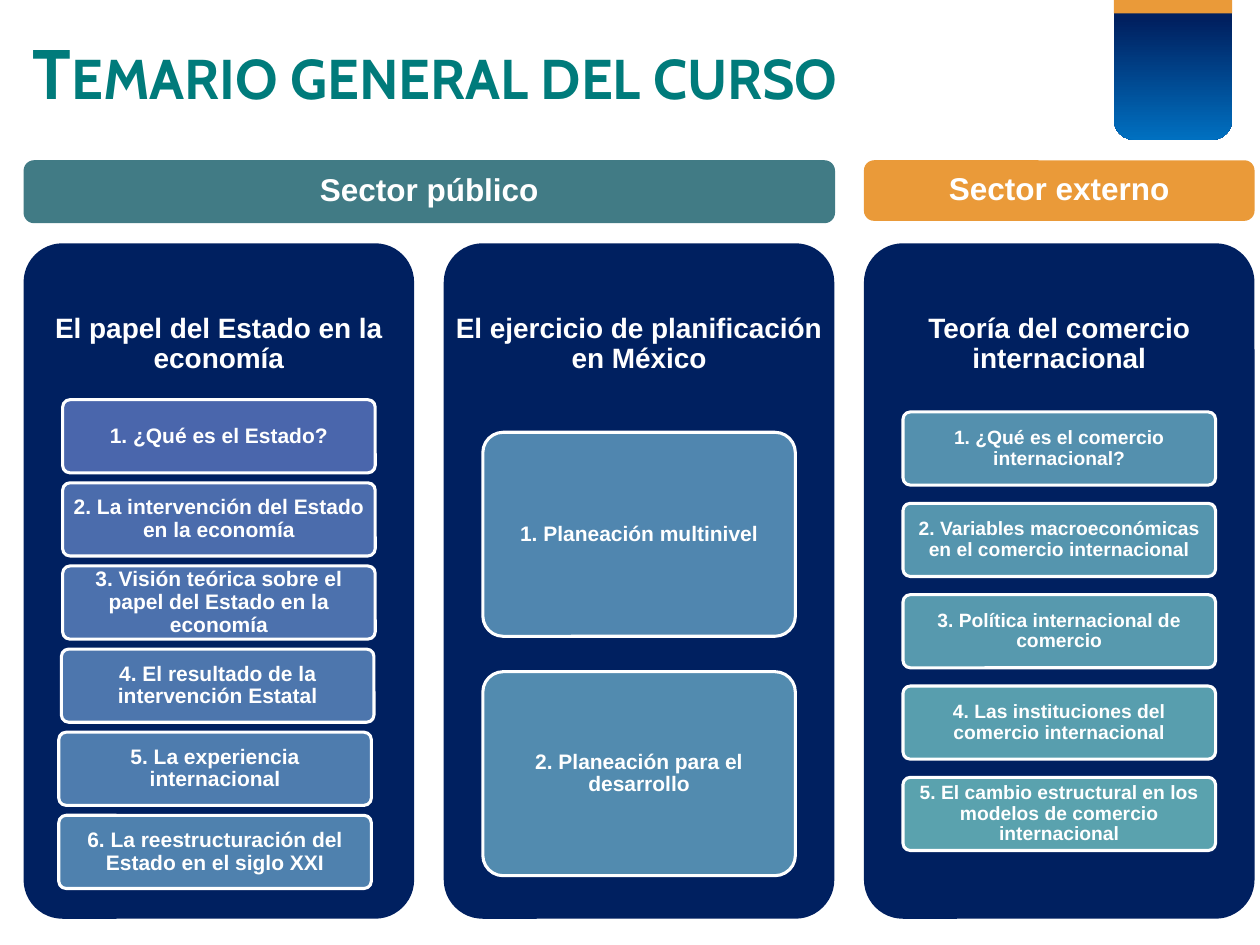
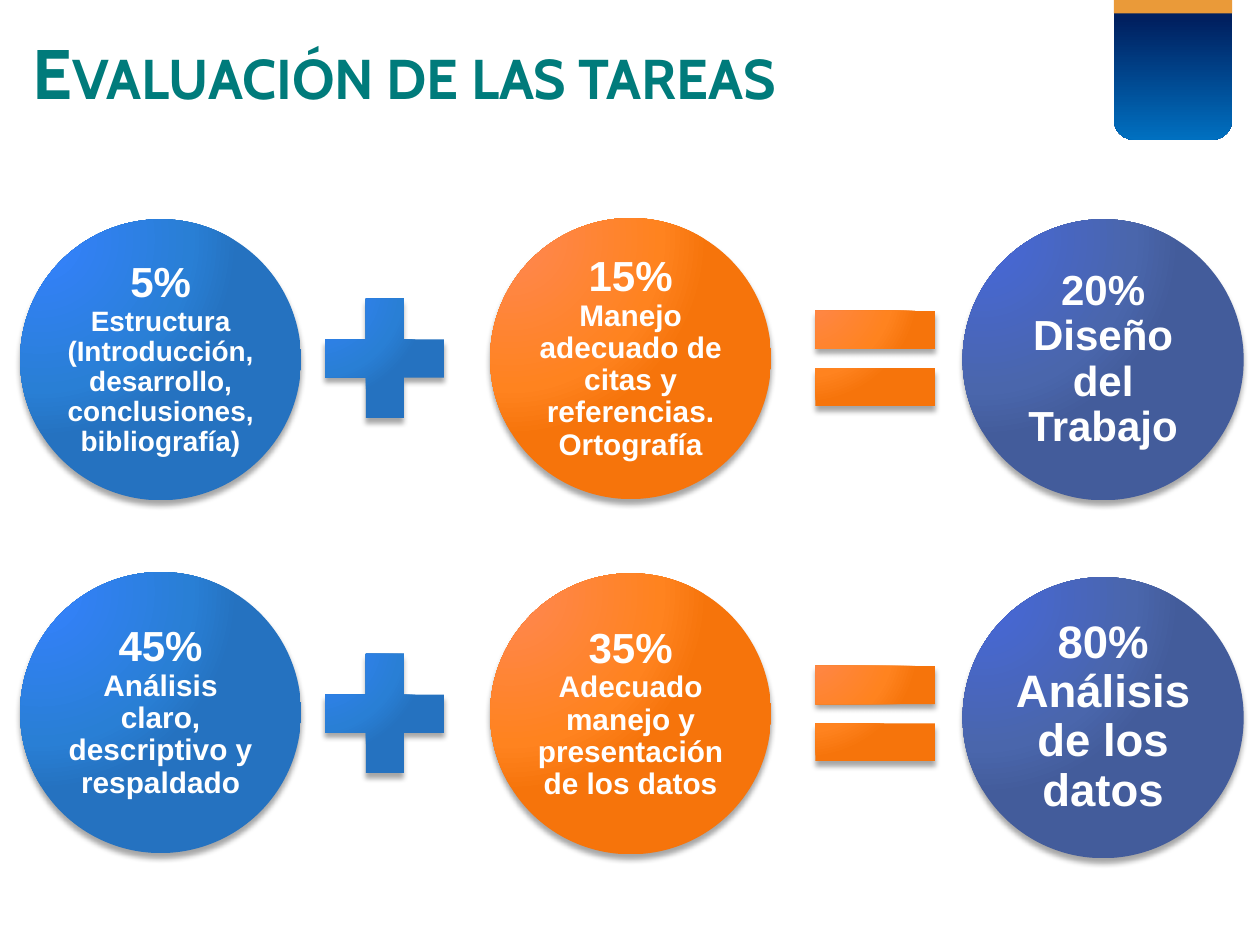
from dataclasses import dataclass

from pptx import Presentation
from pptx.dml.color import RGBColor
from pptx.enum.shapes import MSO_SHAPE as Shape
from pptx.enum.text import MSO_ANCHOR as Anchor, MSO_AUTO_SIZE as AutoSize, PP_ALIGN as Align
from pptx.oxml import parse_xml
from pptx.oxml.ns import nsdecls, qn
from pptx.util import Pt


@dataclass(frozen=True)
class Theme:
    title_font: str = "Cabin"
    body_font: str = "Arial"
    title_color: str = "007B7B"
    white: str = "FFFFFF"
    navy: str = "002060"
    sky: str = "0070C0"
    teal: str = "417B85"
    amber: str = "EA9A39"
    blue_glow: tuple = ((0, "3581FF"), (76, "297FD5"), (100, "2572C0"))
    orange_glow: tuple = ((0, "FF8752"), (76, "FF831F"), (100, "F6740B"))
    indigo_glow: tuple = ((0, "4667DB"), (76, "4A66AC"), (100, "435C9B"))
    title_size: float = 40
    sector_size: float = 18
    heading_size: float = 16


THEME = Theme()
LINEAR = '<a:lin ang="5400000" scaled="0"/>'
RADIAL = '<a:path path="circle"><a:fillToRect l="15000" t="15000" r="100000" b="100000"/></a:path>'


@dataclass(frozen=True)
class Topic:
    heading: str
    cards: tuple
    top: float
    pitch: float
    height: float = 41.8
    size: float = 12
    nudges: tuple = (0,) * 6


TOPICS = (
    Topic("El papel del Estado en la economía", (
        ("1. ¿Qué es el Estado?", "4A66AC"),
        ("2. La intervención del Estado en la economía", "4B6CAC"),
        ("3. Visión teórica sobre el papel del Estado en la economía", "4C71AD"),
        ("4. El resultado de la intervención Estatal", "4D76AD"),
        ("5. La experiencia internacional", "4E7CAE"),
        ("6. La reestructuración del Estado en el siglo XXI", "4F81AE"),
    ), top=228.4, pitch=47.5, nudges=(0, 0, 0, -0.7, -2.2, -2.2)),
    Topic("El ejercicio de planificación en México", (
        ("1. Planeación multinivel", "5086AF"),
        ("2. Planeación para el desarrollo", "528BAF"),
    ), top=247, pitch=136.8, height=116.6),
    Topic("Teoría del comercio internacional", (
        ("1. ¿Qué es el comercio internacional?", "5490AE"),
        ("2. Variables macroeconómicas en el comercio internacional", "5595AE"),
        ("3. Política internacional de comercio", "5799AE"),
        ("4. Las instituciones del comercio internacional", "589EAE"),
        ("5. El cambio estructural en los modelos de comercio internacional", "5AA2AE"),
    ), top=235.4, pitch=52.2, size=11),
)

CIRCLE_LEFTS = (11.5, 280.1, 550.1)
CIRCLE_GLOWS = (THEME.blue_glow, THEME.orange_glow, THEME.indigo_glow)
OPERATORS = (
    (Shape.MATH_PLUS, 173.5, THEME.blue_glow),
    (Shape.MATH_EQUAL, 453.6, THEME.orange_glow),
)
GRADE_ROWS = (
    (158.4, (
        (125.3, "5%\nEstructura\n(Introducción, desarrollo, conclusiones, bibliografía)", 24, 16),
        (124.6, "15%\nManejo adecuado de citas y referencias. Ortografía", 24, 17),
        (125.3, "20%\nDiseño del Trabajo", 24, 24),
    )),
    (361.4, (
        (326.9, "45%\nAnálisis claro, descriptivo y respaldado", 24, 17),
        (327.6, "35%\nAdecuado manejo y presentación de los datos", 24, 17),
        (329.8, "80%\nAnálisis de los datos", 26, 26),
    )),
)


def color(value):
    return RGBColor.from_string(value)


def add_shape(page, kind, left, top, width, height, fill=None, line=None, corner=None):
    shape = page.shapes.add_shape(kind, Pt(left), Pt(top), Pt(width), Pt(height))
    shape.shadow.inherit = False
    if corner is not None:
        shape.adjustments[0] = corner
    if fill:
        shape.fill.solid()
        shape.fill.fore_color.rgb = color(fill)
    if line:
        shape.line.color.rgb = color(line)
        shape.line.width = Pt(1.75)
    else:
        shape.line.fill.background()
    return shape


def set_gradient(shape, stops, direction):
    stop_xml = "".join(
        f'<a:gs pos="{position * 1000}"><a:srgbClr val="{value}"/></a:gs>'
        for position, value in stops
    )
    shape.fill.gradient()
    properties = shape._element.spPr
    properties.replace(properties.find(qn("a:gradFill")), parse_xml(
        f'<a:gradFill {nsdecls("a")} rotWithShape="1">'
        f"<a:gsLst>{stop_xml}</a:gsLst>{direction}</a:gradFill>"
    ))


def add_glowing_shape(page, kind, left, top, size, glow):
    shape = add_shape(page, kind, left, top, size, size)
    set_gradient(shape, glow, RADIAL)
    shape._element.spPr.find(qn("a:effectLst")).append(parse_xml(
        f'<a:outerShdw {nsdecls("a")} blurRad="{Pt(3)}" dist="{Pt(3)}" dir="5400000" '
        'rotWithShape="0"><a:srgbClr val="000000"><a:alpha val="35000"/></a:srgbClr></a:outerShdw>'
    ))
    return shape


def write_centred(box, text, first_size, rest_size=None, inset=2.2):
    frame = box.text_frame
    frame.word_wrap = True
    frame.vertical_anchor = Anchor.MIDDLE
    frame.margin_left = frame.margin_right = Pt(inset)
    frame.margin_top = frame.margin_bottom = Pt(inset)
    frame.text = text
    for index, para in enumerate(frame.paragraphs):
        para.alignment = Align.CENTER
        para.line_spacing = 0.9
        for span in para.runs:
            span.font.name = THEME.body_font
            span.font.size = Pt(rest_size if index else first_size)
            span.font.bold = True
            span.font.color.rgb = color(THEME.white)


def add_page(deck, title, title_height):
    page = deck.slides.add_slide(deck.slide_layouts[5])
    ribbon = add_shape(page, Shape.ROUND_2_SAME_RECTANGLE, 636.5, -0.7, 67.7, 80.6, corner=0)
    ribbon.adjustments[1] = 0.17
    set_gradient(ribbon, ((0, THEME.navy), (15, THEME.navy), (100, THEME.sky)), LINEAR)
    add_shape(page, Shape.RECTANGLE, 636.5, -0.7, 67.7, 8.4, THEME.amber)

    box = page.shapes.title
    box.left, box.top, box.width, box.height = Pt(11.5), Pt(11.5), Pt(618.5), Pt(title_height)
    frame = box.text_frame
    frame.text = title
    frame.auto_size = AutoSize.NONE
    frame.vertical_anchor = Anchor.TOP
    frame.margin_top = Pt(5.5)
    para = frame.paragraphs[0]
    para.alignment = Align.LEFT
    font = para.runs[0].font
    font.name = THEME.title_font
    font.size = Pt(THEME.title_size)
    font.bold = True
    font.color.rgb = color(THEME.title_color)
    para.runs[0]._r.get_or_add_rPr().set("cap", "small")
    return page


def add_sector(page, text, left, width, height, fill):
    sector = add_shape(page, Shape.ROUNDED_RECTANGLE, left, 91.6, width, height, fill)
    write_centred(sector, text, THEME.sector_size)


def add_topic(page, topic, left):
    width = 223.2
    add_shape(page, Shape.ROUNDED_RECTANGLE, left, 139, width, 386, THEME.navy, corner=0.1)
    heading = page.shapes.add_textbox(Pt(left), Pt(139), Pt(width), Pt(116))
    write_centred(heading, topic.heading, THEME.heading_size, inset=5)
    for index, (text, fill) in enumerate(topic.cards):
        card = add_shape(
            page, Shape.ROUNDED_RECTANGLE,
            left + 22.3 + topic.nudges[index], topic.top + index * topic.pitch,
            178.6, topic.height, fill, THEME.white, corner=0.1,
        )
        write_centred(card, text, topic.size)


def add_grade_row(page, operator_top, grades):
    for left, glow, (top, text, first_size, rest_size) in zip(CIRCLE_LEFTS, CIRCLE_GLOWS, grades):
        circle = add_glowing_shape(page, Shape.OVAL, left, top, 160.6, glow)
        write_centred(circle, text, first_size, rest_size)
    for kind, left, glow in OPERATORS:
        add_glowing_shape(page, kind, left, operator_top, 92.9, glow)


def main():
    deck = Presentation()
    deck.slide_width, deck.slide_height = Pt(720), Pt(540)

    syllabus = add_page(deck, "Temario general del curso", 60.5)
    for index, topic in enumerate(TOPICS):
        add_topic(syllabus, topic, 13.5 + index * 240.1)
    add_sector(syllabus, "Sector público", 13.5, 463.7, 36, THEME.teal)
    add_sector(syllabus, "Sector externo", 493.7, 223.2, 34.6, THEME.amber)

    grading = add_page(deck, "Evaluación de las tareas", 68.4)
    for operator_top, grades in GRADE_ROWS:
        add_grade_row(grading, operator_top, grades)

    deck.save("out.pptx")


if __name__ == "__main__":
    main()
